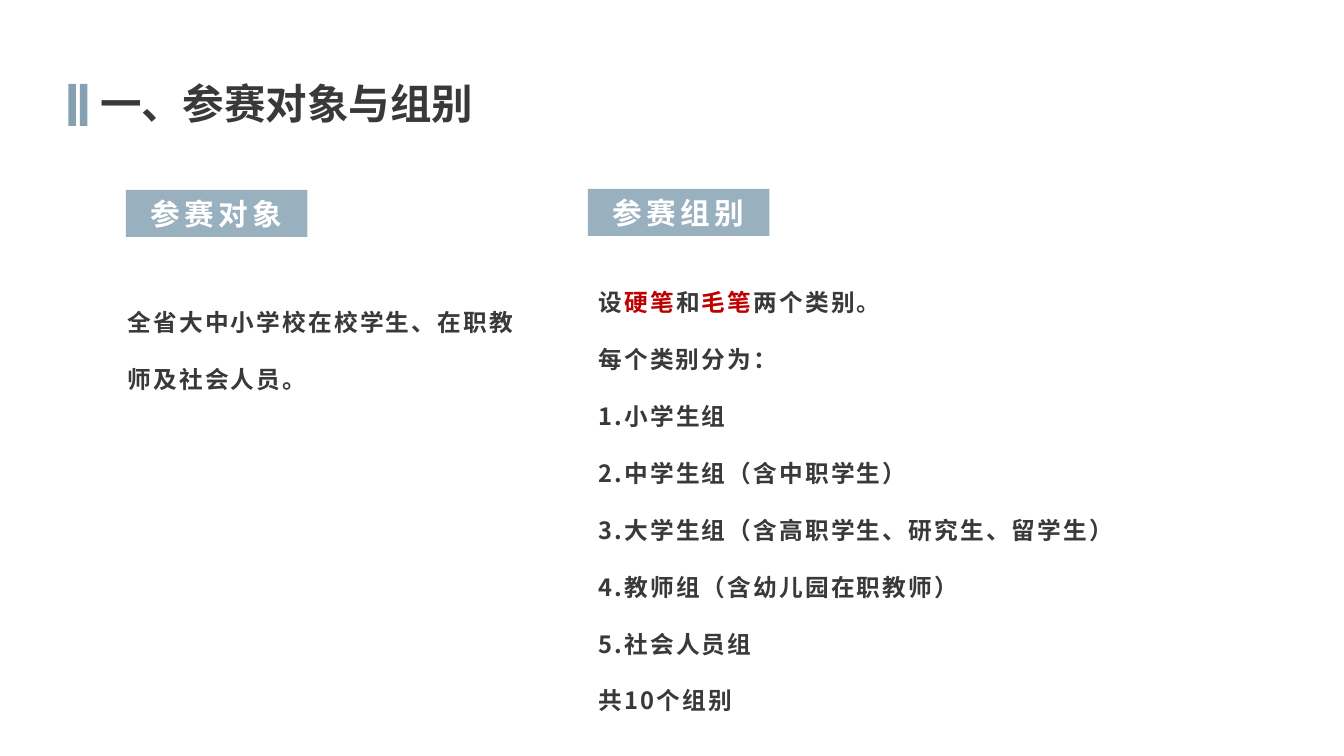
from lxml import etree
from pptx import Presentation
from pptx.dml.color import RGBColor
from pptx.enum.shapes import MSO_SHAPE
from pptx.enum.text import MSO_ANCHOR, MSO_AUTO_SIZE, PP_ALIGN
from pptx.oxml.ns import qn
from pptx.util import Cm, Pt

RECT = MSO_SHAPE.RECTANGLE
TOP, MIDDLE = MSO_ANCHOR.TOP, MSO_ANCHOR.MIDDLE
LEFT, CENTER = PP_ALIGN.LEFT, PP_ALIGN.CENTER
NO_FIT = MSO_AUTO_SIZE.NONE

SANS = "Noto Sans CJK SC"
DARK, RED, WHITE = "393939", "C00000", "FFFFFF"
BAR, TAG = "84A0B1", "99B0BE"

HEAD = {"name": "Calibri", "size": Pt(28), "bold": True}
LABEL = {"name": SANS, "size": Pt(20), "bold": True}
BODY = {"name": SANS, "size": Pt(16), "bold": True}

BREAK = "\n"
TARGET = [["全省大中小学校在校学生、在职教师及社会人员。"]]
GROUPS = [
    ["设", ("硬笔", RED), "和", ("毛笔", RED), "两个类别。"],
    ["每个类别分为：", BREAK, "1.小学生组"],
    ["2.中学生组（含中职学生）"],
    ["3.大学生组（含高职学生、研究生、留学生）"],
    ["4.教师组（含幼儿园在职教师）"],
    ["5.社会人员组"],
    ["共10个组别"],
]


def color(code):
    return RGBColor.from_string(code)


def set_all(target, values):
    for key, value in values.items():
        setattr(target, key, value)


def add_run(para, text, style, ink, gap=0):
    """Add a run; gap is the letter spacing in points."""
    run = para.add_run()
    run.text = text
    set_all(run.font, style)
    run.font.color.rgb = color(ink)
    props = run._r.get_or_add_rPr()
    if gap:
        props.set("spc", str(int(gap * 100)))
    etree.SubElement(props, qn("a:ea")).set("typeface", SANS)


def add_title(slide, text, *box):
    title = slide.shapes.title
    title.left, title.top, title.width, title.height = map(Cm, box)
    frame = title.text_frame
    set_all(frame, {"word_wrap": False, "auto_size": NO_FIT,
                    "vertical_anchor": TOP})
    para = frame.paragraphs[0]
    set_all(para, {"alignment": LEFT, "line_spacing": 1.0})
    add_run(para, text, HEAD, DARK)


def add_block(slide, fill, *box):
    block = slide.shapes.add_shape(RECT, *map(Cm, box))
    block.shadow.inherit = False
    block.fill.solid()
    block.fill.fore_color.rgb = color(fill)
    block.line.fill.background()
    return block


def add_tag(slide, text, left, top):
    frame = add_block(slide, TAG, left, top, 4.32, 1.12).text_frame
    set_all(frame, {"word_wrap": True, "vertical_anchor": MIDDLE})
    para = frame.paragraphs[0]
    para.alignment = CENTER
    add_run(para, text, LABEL, WHITE, 3)


def add_body(slide, lines, *box):
    frame = slide.shapes.add_textbox(*map(Cm, box)).text_frame
    set_all(frame, {"word_wrap": True, "vertical_anchor": MIDDLE})
    for index, line in enumerate(lines):
        para = frame.add_paragraph() if index else frame.paragraphs[0]
        para.line_spacing = 2.0
        for part in line:
            if part == BREAK:
                para.add_line_break()
                continue
            text, ink = (part, DARK) if isinstance(part, str) else part
            add_run(para, text, BODY, ink, 1.5)


def main():
    deck = Presentation()
    deck.slide_width, deck.slide_height = Cm(32), Cm(18)
    slide = deck.slides.add_slide(deck.slide_layouts[5])
    add_title(slide, "一、参赛对象与组别", 2.13, 1.73, 9.45, 1.45)
    for left in (1.63, 1.9):
        add_block(slide, BAR, left, 2, 0.18, 1)
    add_body(slide, TARGET, 2.79, 6.5, 10.03, 3)
    add_body(slide, GROUPS, 14, 6, 15.34, 11.2)
    add_tag(slide, "参赛对象", 3, 4.52)
    add_tag(slide, "参赛组别", 14, 4.5)
    deck.save("out.pptx")


if __name__ == "__main__":
    main()
